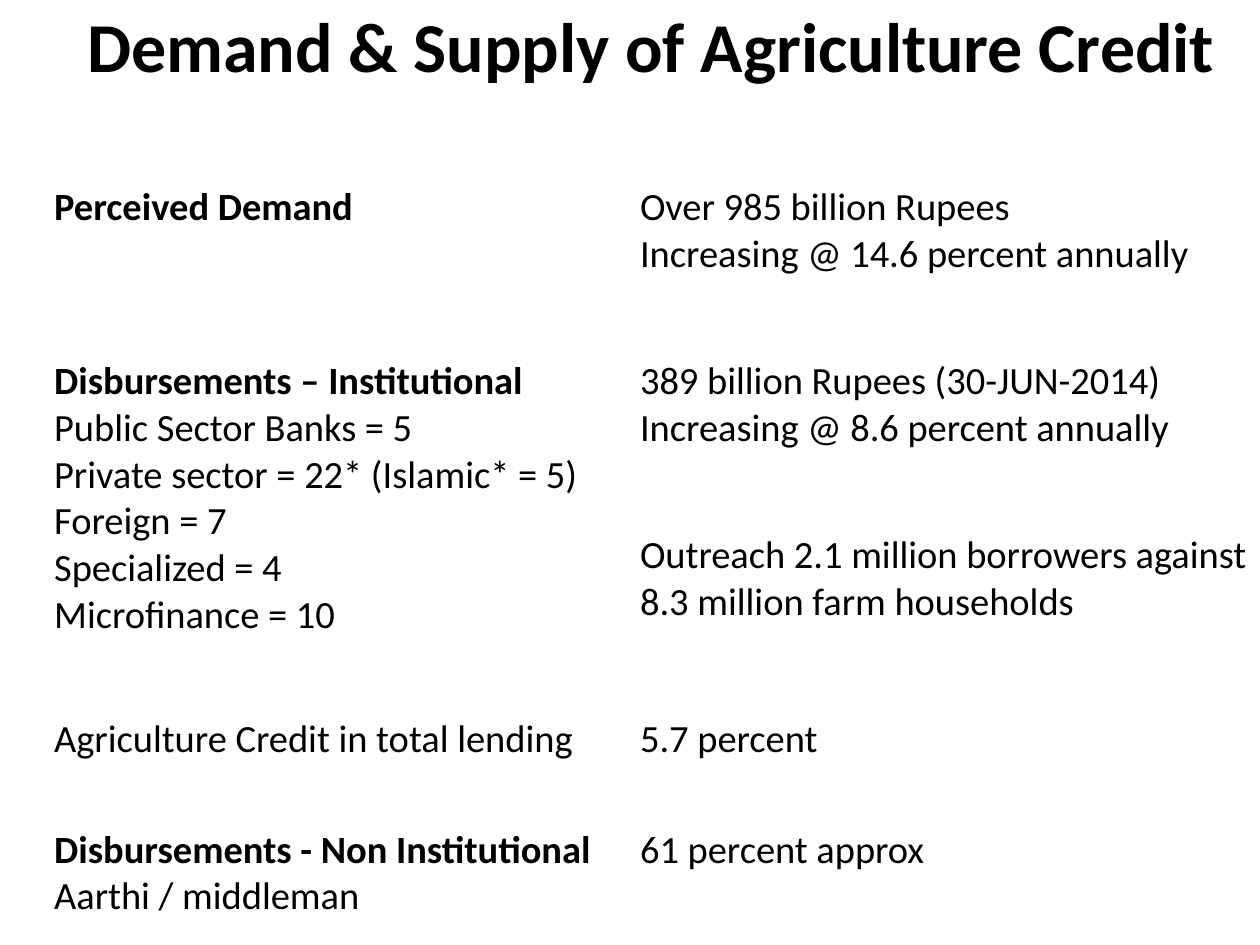
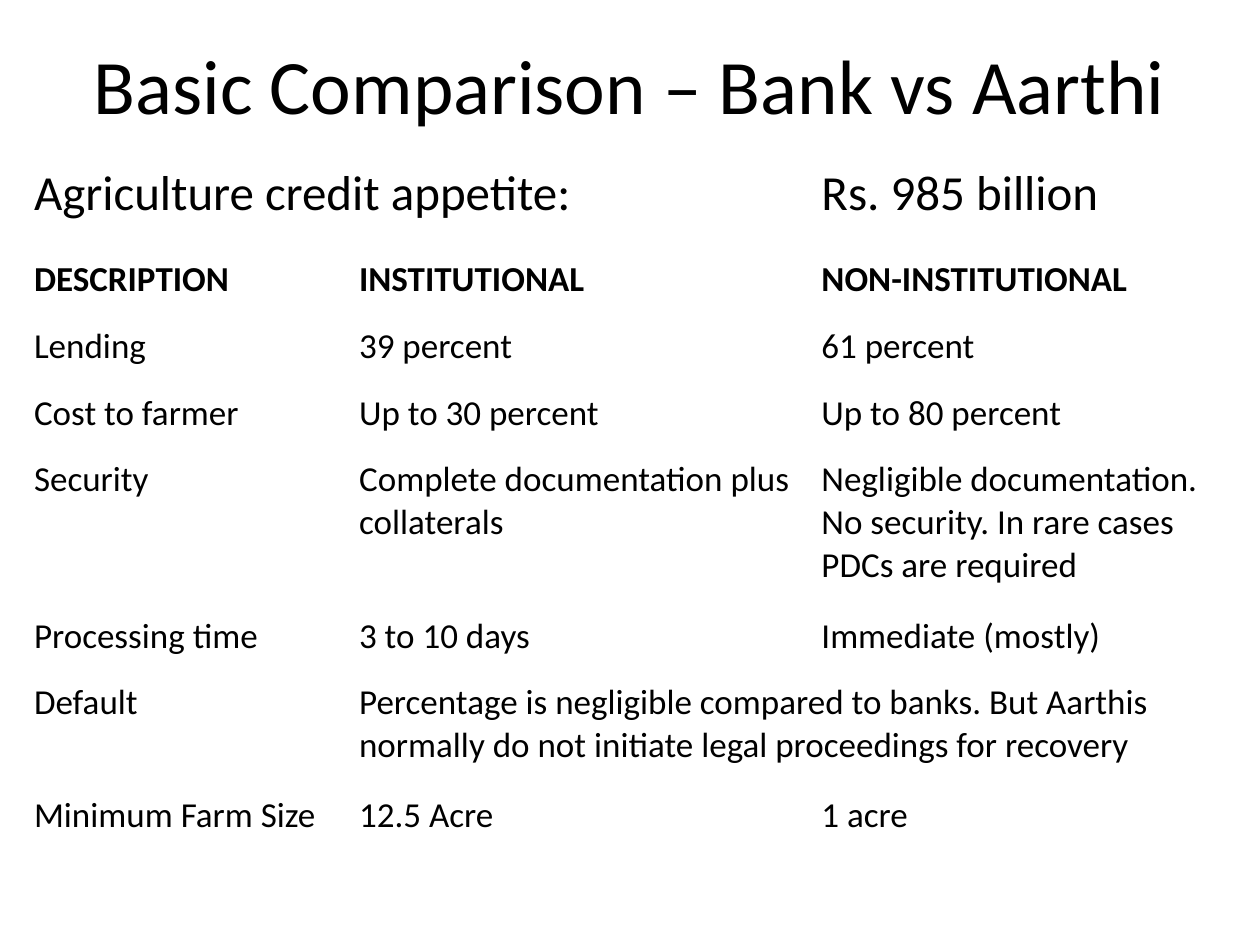
from lxml import etree
from pptx import Presentation
from pptx import util as u
from pptx.dml.color import RGBColor
from pptx.enum import text as t
from pptx.oxml.ns import qn

COLORS = {"ink": "000000", "paper": "FFFFFF"}
FONT = "Calibri"
TITLE_ONLY, BLANK = 5, 6


def write(frame, text, size=20, bold_lines=0, align=t.PP_ALIGN.LEFT):
    """Fill a frame with one paragraph per line; the first bold_lines are bold."""
    frame.word_wrap = True
    for index, line in enumerate(text.split("\n")):
        para = frame.paragraphs[0] if index == 0 else frame.add_paragraph()
        para.alignment = align
        span = para.add_run()
        span.text = line
        span.font.name = FONT
        span.font.size = u.Pt(size)
        span.font.bold = index < bold_lines
        span.font.color.rgb = RGBColor.from_string(COLORS["ink"])


def add_grid(page, left, top, widths, heights, merges):
    """Add a plain white table and merge the given (first, last) cell pairs."""
    frame = page.shapes.add_table(
        len(heights), len(widths), u.Inches(left), u.Inches(top),
        u.Inches(sum(widths)), u.Inches(sum(heights)))
    table = frame.table
    table.first_row = table.horz_banding = False
    for column, width in zip(table.columns, widths):
        column.width = u.Inches(width)
    for row, height in zip(table.rows, heights):
        row.height = u.Inches(height)
    for row_index, row in enumerate(table.rows):
        for cell in row.cells:
            properties = cell._tc.get_or_add_tcPr()
            for side in ("lnL", "lnR", "lnT", "lnB"):
                points = 3 if row_index == 0 and side == "lnB" else 1
                border = etree.SubElement(properties, qn(f"a:{side}"), w=str(u.Pt(points)))
                paint = etree.SubElement(border, qn("a:solidFill"))
                etree.SubElement(paint, qn("a:srgbClr"), val=COLORS["paper"])
            cell.fill.solid()
            cell.fill.fore_color.rgb = RGBColor.from_string(COLORS["paper"])
    for first, last in merges:
        table.cell(*first).merge(table.cell(*last))
    return table


deck = Presentation()
deck.slide_width, deck.slide_height = u.Inches(10), u.Inches(7.5)

# Slide 1: demand and supply
page = deck.slides.add_slide(deck.slide_layouts[BLANK])
credit = add_grid(page, 0.33, 0, [4.65, 5.02], [1.41, 1.38, 1.38, 1.46, 0.88, 0.97],
                  merges=[((0, 0), (0, 1)), ((2, 0), (3, 0))])
write(credit.cell(0, 0).text_frame, "Demand & Supply of Agriculture Credit",
      size=40, bold_lines=1, align=t.PP_ALIGN.CENTER)

# Each row: label, number of bold label lines, value
credit_rows = [
    ("Perceived Demand", 1,
     "Over 985 billion Rupees\nIncreasing @ 14.6 percent annually"),
    ("Disbursements – Institutional\nPublic Sector Banks = 5\n"
     "Private sector = 22* (Islamic* = 5)\nForeign = 7\nSpecialized = 4\nMicrofinance = 10", 1,
     "389 billion Rupees (30-JUN-2014)\nIncreasing @ 8.6 percent annually"),
    (None, 0, "Outreach 2.1 million borrowers against 8.3 million farm households"),
    ("Agriculture Credit in total lending", 0, "5.7 percent"),
    ("Disbursements - Non Institutional\nAarthi / middleman", 1, "61 percent approx"),
]
for row_index, (label, bold_lines, value) in enumerate(credit_rows, start=1):
    if label:
        write(credit.cell(row_index, 0).text_frame, label, size=22, bold_lines=bold_lines)
    write(credit.cell(row_index, 1).text_frame, value, size=22)

# Slide 2: bank against middleman
page = deck.slides.add_slide(deck.slide_layouts[TITLE_ONLY])
title = page.shapes.title
title.left, title.top = u.Inches(0.5), u.Inches(0.08)
title.width, title.height = u.Inches(9), u.Inches(1.17)
title.text_frame.vertical_anchor = t.MSO_ANCHOR.MIDDLE
write(title.text_frame, "Basic Comparison – Bank vs Aarthi", size=44, align=t.PP_ALIGN.CENTER)

comparison = add_grid(page, 0.17, 1.25, [2.58, 3.67, 3.42],
                      [0.75, 0.53, 0.53, 0.53, 1.24, 0.53, 0.89, 0.58],
                      merges=[((0, 0), (0, 1)), ((6, 1), (6, 2))])
comparison_rows = [
    ("Agriculture credit appetite:", None, "Rs. 985 billion"),
    ("DESCRIPTION", "INSTITUTIONAL", "NON-INSTITUTIONAL"),
    ("Lending", "39 percent", "61 percent"),
    ("Cost to farmer", "Up to 30 percent", "Up to 80 percent"),
    ("Security", "Complete documentation plus collaterals",
     "Negligible documentation. No security. In rare cases PDCs are required"),
    ("Processing time", "3 to 10 days", "Immediate (mostly)"),
    ("Default", "Percentage is negligible compared to banks. But Aarthis "
     "normally do not initiate legal proceedings for recovery", None),
    ("Minimum Farm Size", "12.5 Acre", "1 acre"),
]
for row_index, row in enumerate(comparison_rows):
    for column_index, text in enumerate(row):
        if text:
            write(comparison.cell(row_index, column_index).text_frame, text,
                  size=28 if row_index == 0 else 20, bold_lines=int(row_index == 1))

deck.save("out.pptx")
